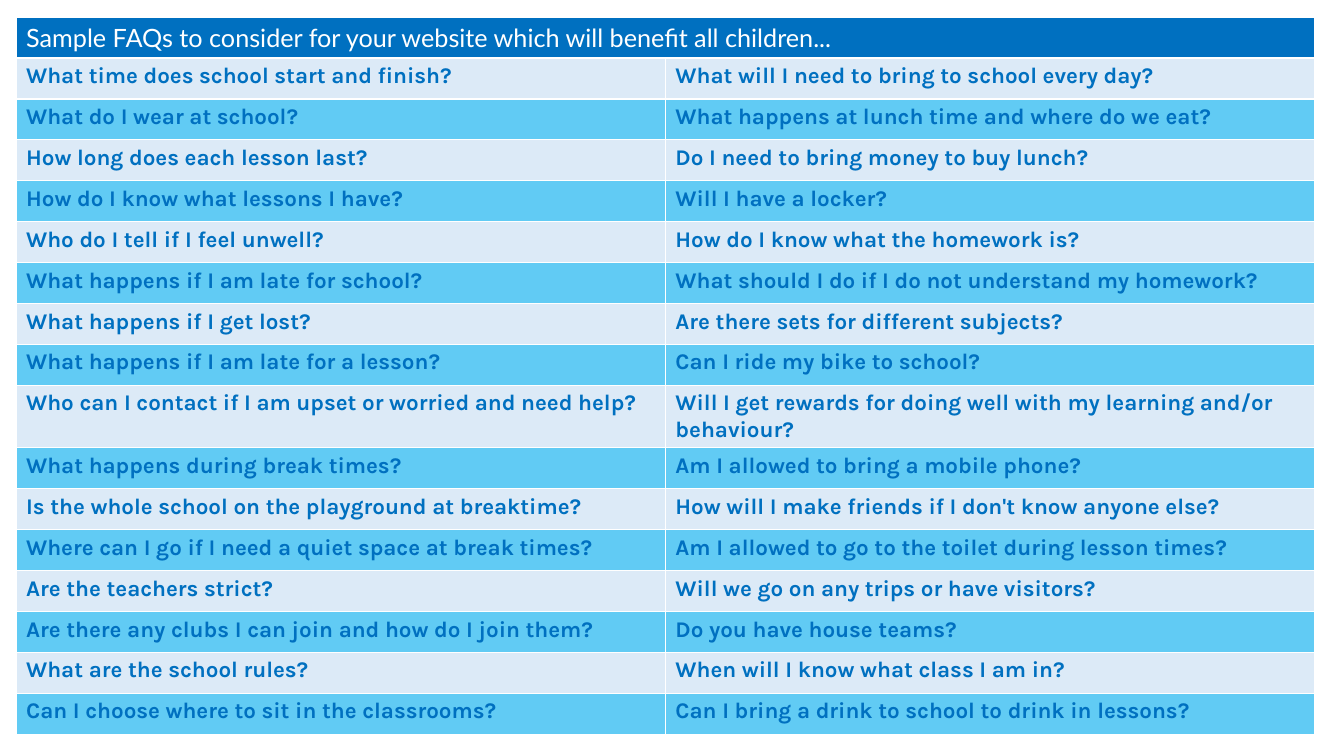
from dataclasses import dataclass

from pptx import Presentation
from pptx.dml.color import RGBColor
from pptx.enum.text import MSO_ANCHOR, PP_ALIGN
from pptx.util import Inches, Pt

TOP = MSO_ANCHOR.TOP
LEFT = PP_ALIGN.LEFT

HEADING = "Sample FAQs to consider for your website which will benefit all children..."
QUESTIONS = [
    ("What time does school start and finish?",
     "What will I need to bring to school every day?"),
    ("What do I wear at school?",
     "What happens at lunch time and where do we eat?"),
    ("How long does each lesson last?",
     "Do I need to bring money to buy lunch?"),
    ("How do I know what lessons I have?",
     "Will I have a locker?"),
    ("Who do I tell if I feel unwell?",
     "How do I know what the homework is?"),
    ("What happens if I am late for school?",
     "What should I do if I do not understand my homework?"),
    ("What happens if I get lost?",
     "Are there sets for different subjects?"),
    ("What happens if I am late for a lesson?",
     "Can I ride my bike to school?"),
    ("Who can I contact if I am upset or worried and need help?",
     "Will I get rewards for doing well with my learning and/or behaviour?"),
    ("What happens during break times?",
     "Am I allowed to bring a mobile phone?"),
    ("Is the whole school on the playground at breaktime?",
     "How will I make friends if I don't know anyone else?"),
    ("Where can I go if I need a quiet space at break times?",
     "Am I allowed to go to the toilet during lesson times?"),
    ("Are the teachers strict?",
     "Will we go on any trips or have visitors?"),
    ("Are there any clubs I can join and how do I join them?",
     "Do you have house teams?"),
    ("What are the school rules?",
     "When will I know what class I am in?"),
    ("Can I choose where to sit in the classrooms?",
     "Can I bring a drink to school to drink in lessons?"),
]


@dataclass(frozen=True)
class Theme:
    blue: RGBColor = RGBColor.from_string("0070C0")
    white: RGBColor = RGBColor.from_string("FFFFFF")
    bands: tuple = (RGBColor.from_string("DCEAF7"), RGBColor.from_string("61CBF4"))
    heading_font: str = "Lato"
    heading_size: int = 18
    body_font: str = "Karla"
    body_size: int = 16

    def heading(self):
        return {"name": self.heading_font, "size": Pt(self.heading_size), "bold": False}

    def body(self):
        return {"name": self.body_font, "size": Pt(self.body_size), "bold": True}


class SlideBuilder:
    def __init__(self, slide, theme):
        self.s = slide
        self.theme = theme

    def cell(self, cell, text, fill, color, font):
        """Fill one table cell with styled text."""
        cell.fill.solid()
        cell.fill.fore_color.rgb = fill
        cell.vertical_anchor = TOP
        p = cell.text_frame.paragraphs[0]
        p.alignment = LEFT
        r = p.add_run()
        r.text = text
        for name, value in font.items():
            setattr(r.font, name, value)
        r.font.color.rgb = color

    def faq_table(self, heading, questions, left, top, width, row_height):
        """Add a heading row across banded rows of question pairs."""
        t = self.theme
        rows, cols = len(questions) + 1, len(questions[0])
        table = self.s.shapes.add_table(
            rows, cols, left, top, width, row_height * rows).table

        # Heading across all columns
        table.cell(0, 0).merge(table.cell(0, cols - 1))
        self.cell(table.cell(0, 0), heading, t.blue, t.white, t.heading())

        # Question rows in alternating colours
        for i, pair in enumerate(questions):
            band = t.bands[i % len(t.bands)]
            for j, question in enumerate(pair):
                self.cell(table.cell(i + 1, j), question, band, t.blue, t.body())


def main():
    prs = Presentation()
    prs.slide_width, prs.slide_height = Inches(13.33), Inches(7.5)
    s = prs.slides.add_slide(prs.slide_layouts[6])

    # The row with a two-line question grows to fit, the rest share one height
    table_height, two_line_row = Inches(7.12), Inches(0.62)
    row_height = (table_height - two_line_row) // (len(QUESTIONS))

    builder = SlideBuilder(s, Theme())
    builder.faq_table(HEADING, QUESTIONS, Inches(0.16), Inches(0.17),
                      Inches(12.88), row_height)
    prs.save("out.pptx")


if __name__ == "__main__":
    main()
